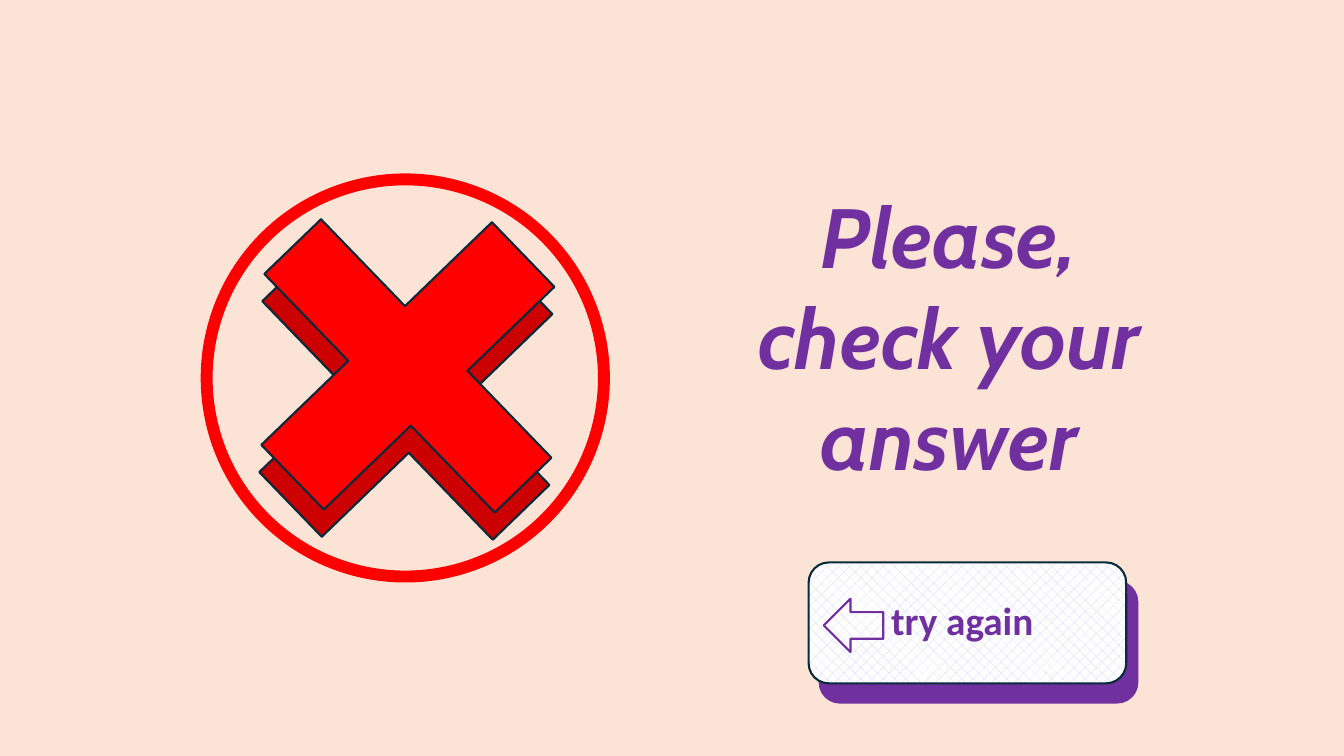
"""Build a quiz feedback slide that asks the learner to try again."""
from dataclasses import dataclass
from typing import Optional

from lxml import etree
from pptx import Presentation
from pptx import util as u
from pptx.dml import color
from pptx.enum import dml, shapes, text
from pptx.oxml import ns

COLORS = {
    "peach": "FBE3D6",
    "purple": "7030A0",
    "red": "FF0000",
    "dark_red": "CC0000",
    "navy": "092A39",
    "lilac": "CCCCFF",
    "white": "FFFFFF",
}
KIND = shapes.MSO_SHAPE


@dataclass
class Figure:
    """A preset shape with its place in inches and its look."""
    kind: KIND
    left: float
    top: float
    width: float
    height: float
    line: str
    fill: Optional[str] = None
    weight: float = 1.5
    rotation: float = 0
    adjust: Optional[float] = None


def rgb(name: str) -> color.RGBColor:
    """Look up a named colour."""
    return color.RGBColor.from_string(COLORS[name])


def add_figure(slide, fig: Figure):
    """Draw one preset shape."""
    box = map(u.Inches, (fig.left, fig.top, fig.width, fig.height))
    sp = slide.shapes.add_shape(fig.kind, *box)
    sp.shadow.inherit = False
    sp.rotation = fig.rotation
    if fig.adjust is not None:
        sp.adjustments[0] = fig.adjust
    if fig.fill:
        sp.fill.solid()
        sp.fill.fore_color.rgb = rgb(fig.fill)
    else:
        sp.fill.background()
    sp.line.color.rgb = rgb(fig.line)
    sp.line.width = u.Pt(fig.weight)
    return sp


def style_paragraph(p, font: str, size: float, italic: bool = False) -> None:
    """Centre a paragraph and set its bold purple font."""
    p.alignment = text.PP_ALIGN.CENTER
    p.font.name = font
    p.font.size = u.Pt(size)
    p.font.bold = True
    p.font.italic = italic
    p.font.color.rgb = rgb("purple")


def outline_text(p) -> None:
    """Give a paragraph's letters a thin purple outline."""
    ln = etree.Element(ns.qn("a:ln"), w=str(u.Pt(1)))
    fill = etree.SubElement(ln, ns.qn("a:solidFill"))
    etree.SubElement(fill, ns.qn("a:srgbClr"), val=COLORS["purple"])
    p.font._element.insert(0, ln)


def add_heading(slide) -> None:
    """Place the three-line message in the title placeholder."""
    sp = slide.shapes.title
    sp.left, sp.top = u.Inches(7.24), u.Inches(1.78)
    sp.width, sp.height = u.Inches(4.58), u.Inches(3.13)
    tf = sp.text_frame
    tf.text = "Please,\ncheck your\nanswer"
    tf.word_wrap = True
    tf.auto_size = text.MSO_AUTO_SIZE.SHAPE_TO_FIT_TEXT
    tf.vertical_anchor = text.MSO_ANCHOR.TOP
    tf.margin_right = u.Inches(0.33)
    for p in tf.paragraphs:
        style_paragraph(p, "Cabin", 60, italic=True)
        outline_text(p)


def add_cross(slide) -> None:
    """Draw the ringed cross with its darker underside."""
    add_figure(slide, Figure(KIND.FLOWCHART_CONNECTOR, 2.05, 1.78, 3.94, 3.94,
                             "red", weight=8.5))
    for left, top, fill in ((2.38, 2.31, "dark_red"), (2.4, 2.04, "red")):
        add_figure(slide, Figure(KIND.CROSS, left, top, 3.29, 3.18, "navy", fill,
                                 rotation=46, adjust=0.377))


def add_button(slide) -> None:
    """Draw the try-again button with its base and arrow."""
    add_figure(slide, Figure(KIND.ROUNDED_RECTANGLE, 8.13, 5.77, 3.15, 1.2,
                             "purple", "purple"))
    sp = add_figure(slide, Figure(KIND.ROUNDED_RECTANGLE, 8.02, 5.58, 3.15, 1.2, "navy"))
    sp.fill.patterned()
    sp.fill.pattern = dml.MSO_PATTERN.PERCENT_25
    sp.fill.fore_color.rgb = rgb("lilac")
    sp.fill.back_color.rgb = rgb("white")
    tf = sp.text_frame
    tf.text = "try again"
    tf.vertical_anchor = text.MSO_ANCHOR.MIDDLE
    tf.margin_right = u.Inches(0.2)
    p = tf.paragraphs[0]
    p.line_spacing = 0.9
    p.space_before = u.Pt(10)
    style_paragraph(p, "Calibri", 28)
    add_figure(slide, Figure(KIND.LEFT_ARROW, 8.17, 5.94, 0.59, 0.53, "purple"))


def main() -> None:
    """Build and save the slide."""
    prs = Presentation()
    prs.slide_width, prs.slide_height = u.Inches(13.33), u.Inches(7.5)
    slide = prs.slides.add_slide(prs.slide_layouts.get_by_name("Title Only"))
    slide.background.fill.solid()
    slide.background.fill.fore_color.rgb = rgb("peach")
    add_heading(slide)
    add_cross(slide)
    add_button(slide)
    prs.save("out.pptx")


if __name__ == "__main__":
    main()
